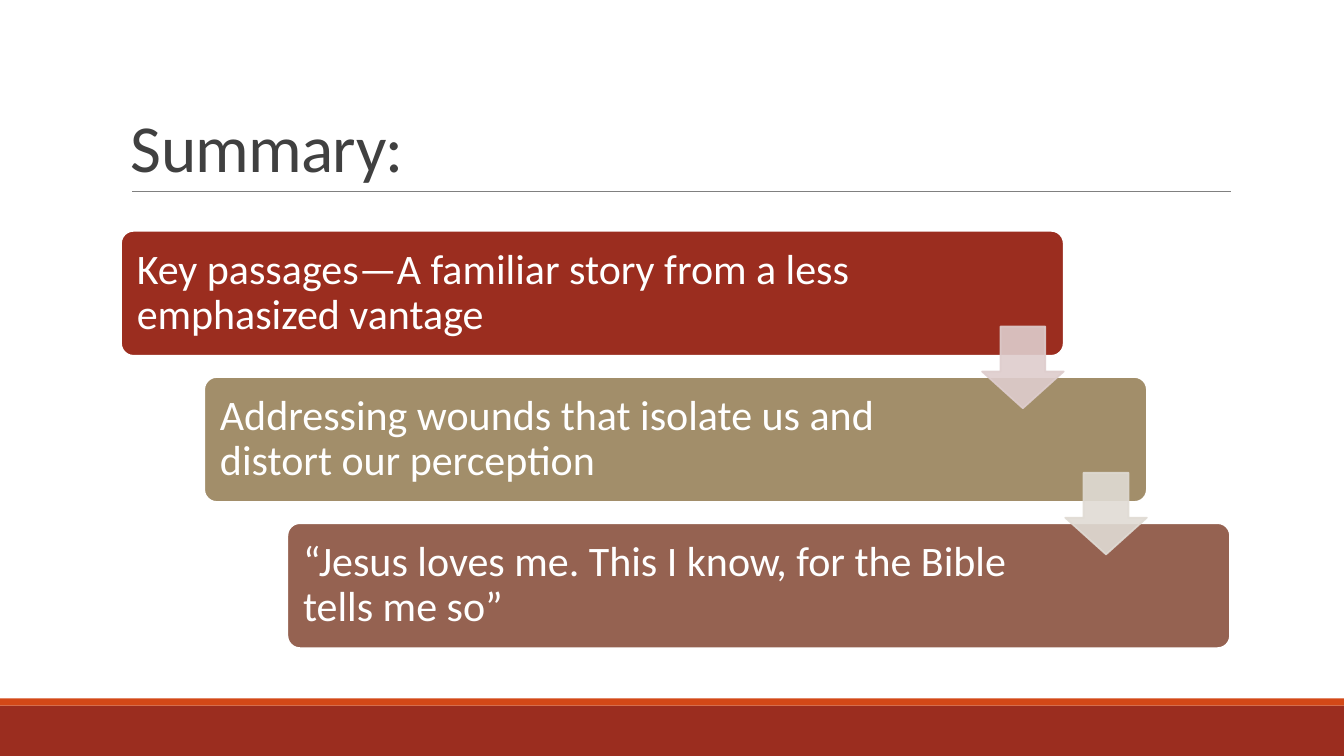
"""Build the summary slide with three stepped statements joined by arrows."""
from lxml import etree
from pptx import Presentation
from pptx.dml.color import RGBColor
from pptx.enum import shapes, text
from pptx.oxml import ns
from pptx.util import Inches, Pt

WHITE = RGBColor(0xFF, 0xFF, 0xFF)
BRICK = RGBColor(0x9B, 0x2D, 0x1F)
ORANGE = RGBColor(0xD3, 0x48, 0x17)
SAND = RGBColor(0xA2, 0x8E, 0x6A)
CLAY = RGBColor(0x95, 0x62, 0x51)
PINK = RGBColor(0xDE, 0xCD, 0xCD)
STONE = RGBColor(0xE0, 0xDB, 0xD4)
GRAY = RGBColor(0x80, 0x80, 0x80)
CHARCOAL = RGBColor(0x40, 0x40, 0x40)

TITLE = "Summary:"
STEPS = [
    ("Key passages—A familiar story from a less emphasized vantage", BRICK, 1.38),
    ("Addressing wounds that isolate us and distort our perception", SAND, 1.75),
    ("“Jesus loves me. This I know, for the Bible tells me so”", CLAY, 1.75),
]
ARROWS = [PINK, STONE]
BANDS = [(7, 0.5, BRICK), (6.93, 0.07, ORANGE)]

WIDTH, HEIGHT = 13.33, 7.5
LEFT, TOP = 1.2, 2.29
STEP_X, STEP_Y = 0.825, 1.45
BOX_WIDTH, BOX_HEIGHT = 9.35, 1.24
ARROW_SIZE, ARROW_DROP = 0.81, 0.95
TITLE_FORMAT = {"name": "Calibri", "size": Pt(48)}
STEP_FORMAT = {"name": "Calibri", "size": Pt(30)}


def add_block(page, kind, place, color, edge=None, adjust=()):
    block = page.shapes.add_shape(kind, *map(Inches, place))
    block.shadow.inherit = False
    block.fill.solid()
    block.fill.fore_color.rgb = color
    if edge is None:
        block.line.fill.background()
    else:
        block.line.color.rgb = edge
        block.line.width = Pt(1.25)
    for index, value in enumerate(adjust):
        block.adjustments[index] = value
    return block


def write(shape, words, color, font_format, spacing, frame_format):
    frame = shape.text_frame
    for name, value in {"word_wrap": True, **frame_format}.items():
        setattr(frame, name, value)
    para = frame.paragraphs[0]
    para.alignment = text.PP_ALIGN.LEFT
    para.line_spacing = spacing
    span = para.add_run()
    span.text = words
    for name, value in font_format.items():
        setattr(span.font, name, value)
    span.font.color.rgb = color
    return span


def add_heading(page):
    box = page.shapes.add_textbox(*map(Inches, (LEFT, 0.31, 11, 1.59)))
    span = write(box, TITLE, CHARCOAL, TITLE_FORMAT, 0.85,
                 {"vertical_anchor": text.MSO_ANCHOR.BOTTOM})
    span.font._element.set("spc", "-50")
    rule = page.shapes.add_connector(
        shapes.MSO_CONNECTOR.STRAIGHT, *map(Inches, (1.31, 1.9, 12.21, 1.9)))
    rule.line.color.rgb = GRAY
    rule.line.width = Pt(0.5)
    etree.SubElement(rule._element.spPr, ns.qn("a:effectLst"))


def add_step(page, row, words, color, right_margin):
    place = (LEFT + row * STEP_X, TOP + row * STEP_Y, BOX_WIDTH, BOX_HEIGHT)
    box = add_block(page, shapes.MSO_SHAPE.ROUNDED_RECTANGLE, place, color, WHITE, (0.1,))
    write(box, words, WHITE, STEP_FORMAT, 0.9, {
        "vertical_anchor": text.MSO_ANCHOR.MIDDLE,
        "margin_left": Inches(0.12),
        "margin_right": Inches(right_margin),
    })


def add_arrow(page, row, color):
    place = (LEFT + row * STEP_X + BOX_WIDTH - ARROW_SIZE,
             TOP + row * STEP_Y + ARROW_DROP, ARROW_SIZE, ARROW_SIZE)
    arrow = add_block(page, shapes.MSO_SHAPE.DOWN_ARROW, place, color, color, (0.55, 0.45))
    for tint in arrow._element.spPr.iter(ns.qn("a:srgbClr")):
        etree.SubElement(tint, ns.qn("a:alpha"), val="90000")


def main():
    deck = Presentation()
    deck.slide_width, deck.slide_height = Inches(WIDTH), Inches(HEIGHT)
    page = deck.slides.add_slide(deck.slide_layouts[6])
    for top, height, color in BANDS:
        add_block(page, shapes.MSO_SHAPE.RECTANGLE, (0, top, WIDTH, height), color)
    add_heading(page)
    for row, step in enumerate(STEPS):
        add_step(page, row, *step)
    for row, color in enumerate(ARROWS):
        add_arrow(page, row, color)
    deck.save("out.pptx")


if __name__ == "__main__":
    main()
